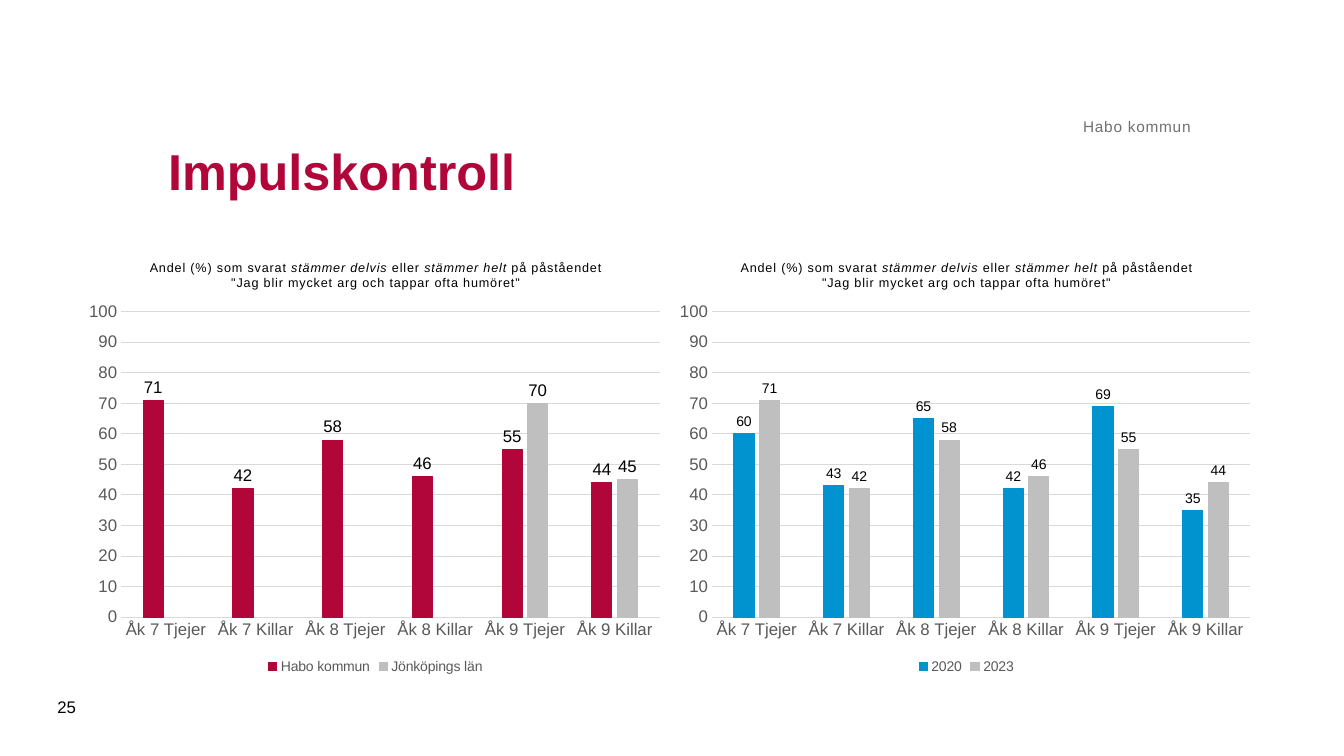
from lxml import etree
from pptx import Presentation
from pptx.chart.data import CategoryChartData
from pptx.dml.color import RGBColor
from pptx.enum.chart import XL_CHART_TYPE as ChartType
from pptx.enum.chart import XL_LABEL_POSITION as LabelPosition
from pptx.enum.chart import XL_LEGEND_POSITION as LegendPosition
from pptx.enum.chart import XL_TICK_MARK as TickMark
from pptx.enum.text import MSO_ANCHOR as Anchor
from pptx.enum.text import PP_ALIGN as Align
from pptx.oxml import parse_xml
from pptx.oxml.ns import nsdecls, qn
from pptx.util import Inches, Pt

CRIMSON = RGBColor(0xB1, 0x06, 0x3A)
BLUE = RGBColor(0x00, 0x93, 0xD0)
SILVER = RGBColor(0xBF, 0xBF, 0xBF)
GRID_GRAY = RGBColor(0xD9, 0xD9, 0xD9)
AXIS_GRAY = RGBColor(0x59, 0x59, 0x59)
HEADER_GRAY = RGBColor(0x71, 0x71, 0x71)
BLACK = RGBColor(0, 0, 0)

FONT = "Arial"
WHOLE_NUMBER = "#,##0;#,##0"
GROUPS = [f"Åk {grade} {sex}" for grade in (7, 8, 9) for sex in ("Tjejer", "Killar")]
HABO_2023 = (71, 42, 58, 46, 55, 44)
COUNTY_2023 = (None, None, None, None, 70, 45)
HABO_2020 = (60, 43, 65, 42, 69, 35)

# Lines of (text, italic) runs
QUESTION = [
    [("Andel (%) som svarat ", False), ("stämmer delvis", True), (" eller ", False),
     ("stämmer helt", True), (" på påståendet", False)],
    [('"Jag blir mycket arg och tappar ofta humöret"', False)],
]


def style_font(font, size, color, bold=False, italic=False):
    font.name = FONT
    font.size = Pt(size)
    font.bold = bold
    font.italic = italic
    font.color.rgb = color


def set_spacing(run, points):
    run.font._element.set("spc", str(round(points * 100)))


def add_text(slide, text, left, top, width, height, size, color=BLACK, bold=False,
             align=Align.LEFT, anchor=Anchor.MIDDLE, inset=None, spacing=0):
    box = slide.shapes.add_textbox(Inches(left), Inches(top), Inches(width), Inches(height))
    frame = box.text_frame
    frame.word_wrap = True
    frame.vertical_anchor = anchor
    if inset is not None:
        frame.margin_left = frame.margin_right = Inches(inset)
        frame.margin_top = frame.margin_bottom = Inches(inset)
    paragraph = frame.paragraphs[0]
    paragraph.alignment = align
    run = paragraph.add_run()
    run.text = text
    style_font(run.font, size, color, bold)
    if spacing:
        set_spacing(run, spacing)


def write_question(chart):
    chart.has_title = True
    frame = chart.chart_title.text_frame
    chart.chart_title.include_in_layout = False
    for index, line in enumerate(QUESTION):
        paragraph = frame.add_paragraph() if index else frame.paragraphs[0]
        paragraph.alignment = Align.CENTER
        for text, italic in line:
            run = paragraph.add_run()
            run.text = text
            style_font(run.font, 9, BLACK, italic=italic)
            set_spacing(run, 0.6)


def place_plot(chart, x, y, w, h):
    """Fix the inner plot area as fractions of the chart."""
    plot_area = chart._chartSpace.chart.plotArea
    for old in plot_area.findall(qn("c:layout")):
        plot_area.remove(old)
    layout = parse_xml(f"<c:layout {nsdecls('c')}><c:manualLayout/></c:layout>")
    settings = [("layoutTarget", "inner"), ("xMode", "edge"), ("yMode", "edge"),
                ("x", x), ("y", y), ("w", w), ("h", h)]
    for name, value in settings:
        etree.SubElement(layout[0], qn(f"c:{name}")).set("val", str(value))
    plot_area.insert(0, layout)


def style_axes(chart):
    for axis in (chart.category_axis, chart.value_axis):
        axis.major_tick_mark = axis.minor_tick_mark = TickMark.NONE
        style_font(axis.tick_labels.font, 12, AXIS_GRAY)
    groups, percent = chart.category_axis, chart.value_axis
    groups.format.line.color.rgb = GRID_GRAY
    groups.format.line.width = Pt(0.75)
    percent.minimum_scale, percent.maximum_scale = 0, 100
    percent.major_unit = 10
    percent.tick_labels.number_format = WHOLE_NUMBER
    percent.tick_labels.number_format_is_linked = False
    percent.format.line.fill.background()
    gridline = percent.major_gridlines.format.line
    gridline.color.rgb = GRID_GRAY
    gridline.width = Pt(0.75)


def style_series(series, color, label_size):
    series.format.fill.solid()
    series.format.fill.fore_color.rgb = color
    series.format.line.color.rgb = color
    series.format.line.width = Pt(0.75)
    labels = series.data_labels
    labels.show_value = True
    labels.position = LabelPosition.OUTSIDE_END
    labels.number_format = WHOLE_NUMBER
    labels.number_format_is_linked = False
    style_font(labels.font, label_size, BLACK)


def add_column_chart(slide, left, columns, label_size):
    """columns holds (name, values, color) for each series."""
    data = CategoryChartData(number_format="0")
    data.categories = GROUPS
    for name, values, _ in columns:
        data.add_series(name, values)
    chart = slide.shapes.add_chart(ChartType.COLUMN_CLUSTERED, Inches(left), Inches(2.4),
                                   Inches(5.87), Inches(4.33), data).chart
    style_font(chart.font, 10, BLACK)
    write_question(chart)
    style_axes(chart)
    plot = chart.plots[0]
    plot.gap_width = 219
    plot.overlap = -27
    plot.vary_by_categories = False
    for series, (_, _, color) in zip(plot.series, columns):
        style_series(series, color, label_size)
    chart.has_legend = True
    chart.legend.position = LegendPosition.BOTTOM
    chart.legend.include_in_layout = False
    style_font(chart.legend.font, 10, AXIS_GRAY)
    place_plot(chart, 0.07, 0.16, 0.91, 0.7)


def main():
    deck = Presentation()
    deck.slide_width, deck.slide_height = Inches(13.33), Inches(7.5)
    slide = deck.slides.add_slide(deck.slide_layouts[6])
    add_column_chart(slide, 0.79, [("Habo kommun", HABO_2023, CRIMSON),
                                   ("Jönköpings län", COUNTY_2023, SILVER)], label_size=12)
    add_text(slide, "Impulskontroll", 1.57, 0.98, 10.24, 1.42, 36, CRIMSON, bold=True)
    add_text(slide, "Habo kommun", 1.57, 0.62, 10.24, 0.73, 11, HEADER_GRAY,
             align=Align.RIGHT, anchor=Anchor.BOTTOM, inset=0, spacing=0.5)
    add_text(slide, "25", 0.47, 6.81, 0.57, 0.4, 12)
    add_column_chart(slide, 6.65, [("2020", HABO_2020, BLUE),
                                   ("2023", HABO_2023, SILVER)], label_size=10)
    deck.save("out.pptx")


if __name__ == "__main__":
    main()
